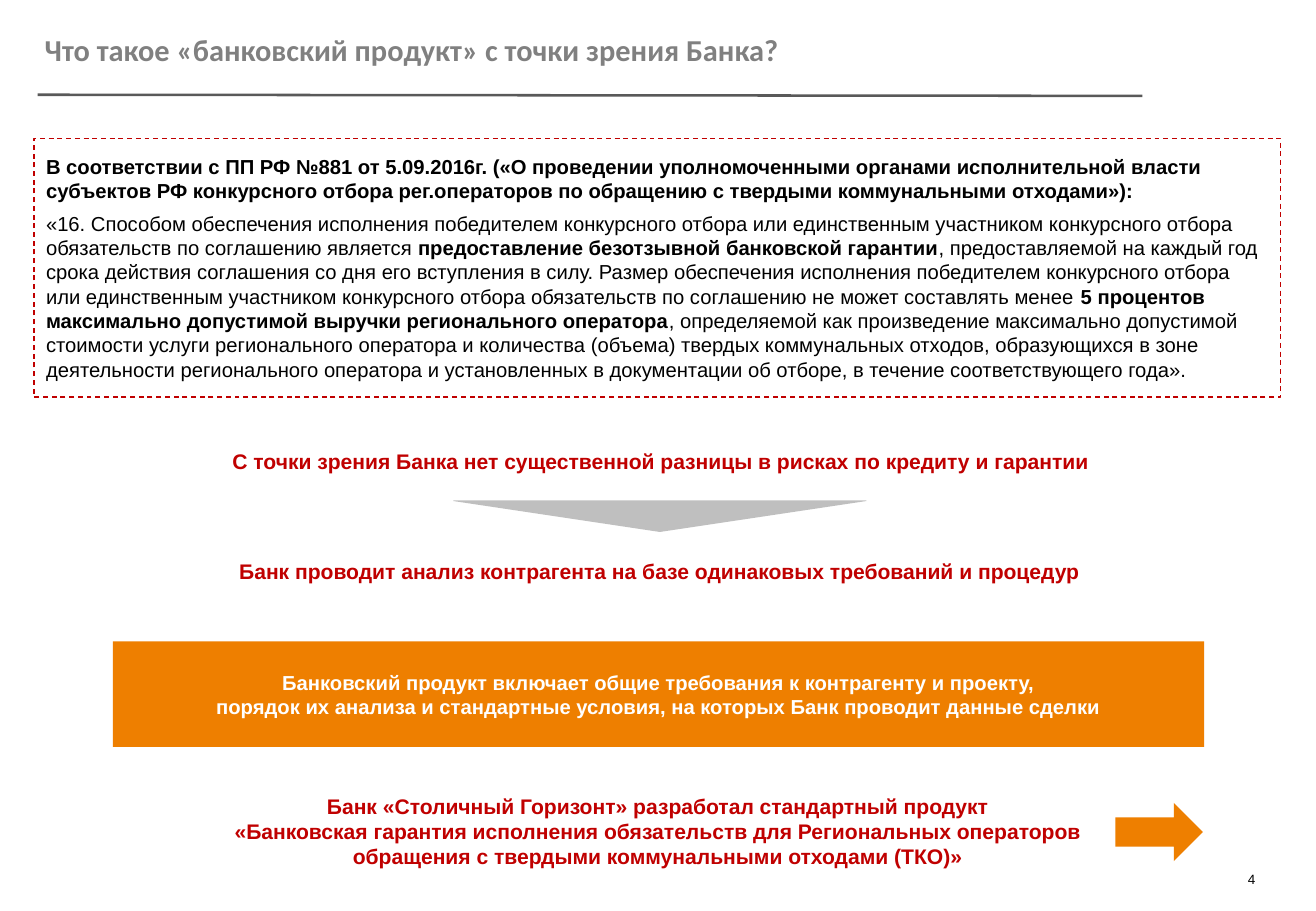
from dataclasses import dataclass
from typing import Optional

import lxml.etree
import pptx
import pptx.dml.color
import pptx.enum.dml
import pptx.enum.shapes
import pptx.enum.text
import pptx.oxml.ns
import pptx.util

Align = pptx.enum.text.PP_ALIGN
Anchor = pptx.enum.text.MSO_ANCHOR
Preset = pptx.enum.shapes.MSO_SHAPE


@dataclass(frozen=True)
class Theme:
    grey: str = "808080"
    rule: str = "595959"
    pointer: str = "BFBFBF"
    red: str = "C00000"
    orange: str = "EE7F00"
    black: str = "000000"
    white: str = "FFFFFF"
    heading_font: str = "Calibri"
    body_font: str = "Arial"
    heading: float = 18
    claim: float = 12.5
    body: float = 12
    number: float = 8
    paragraph_gap: float = 4.8


@dataclass(frozen=True)
class Area:
    """Percentages of the slide's width and height."""
    left: float
    top: float
    width: float
    height: float


@dataclass(frozen=True)
class Run:
    text: str
    bold: bool = True


@dataclass(frozen=True)
class Figure:
    area: Area
    preset: Preset
    fill: str
    line: Optional[str] = None
    rotation: float = 0
    adjustment: Optional[float] = None


@dataclass(frozen=True)
class Claim:
    area: Area
    lines: tuple[str, ...]


THEME = Theme()
deck = pptx.Presentation()
deck.slide_width = pptx.util.Inches(10.83)
deck.slide_height = pptx.util.Inches(7.5)
slide = deck.slides.add_slide(deck.slide_layouts[6])


def across(percent: float) -> int:
    return round(deck.slide_width * percent / 100)


def down(percent: float) -> int:
    return round(deck.slide_height * percent / 100)


def place(area: Area) -> tuple[int, int, int, int]:
    return across(area.left), down(area.top), across(area.width), down(area.height)


def rgb(value: str) -> pptx.dml.color.RGBColor:
    return pptx.dml.color.RGBColor.from_string(value)


def write(holder, paragraphs: list[list[Run]], *, size: float = THEME.body,
          color: str = THEME.black, font: str = THEME.body_font,
          align: Align = Align.LEFT, anchor: Anchor = Anchor.TOP,
          gap: float = 0) -> None:
    frame = holder.text_frame
    frame.word_wrap = True
    frame.vertical_anchor = anchor
    for index, runs in enumerate(paragraphs):
        paragraph = frame.add_paragraph() if index else frame.paragraphs[0]
        paragraph.alignment = align
        if index and gap:
            paragraph.space_before = pptx.util.Pt(gap)
        for part in runs:
            run = paragraph.add_run()
            run.text = part.text
            run.font.name = font
            run.font.size = pptx.util.Pt(size)
            run.font.bold = part.bold
            run.font.color.rgb = rgb(color)


def draw(figure: Figure):
    shape = slide.shapes.add_shape(figure.preset, *place(figure.area))
    shape.shadow.inherit = False
    shape.rotation = figure.rotation
    shape.fill.solid()
    shape.fill.fore_color.rgb = rgb(figure.fill)
    if figure.line:
        shape.line.color.rgb = rgb(figure.line)
        shape.line.width = pptx.util.Pt(0.75)
        shape.line.dash_style = pptx.enum.dml.MSO_LINE.DASH
    else:
        shape.line.fill.background()
    if figure.adjustment is not None:
        shape.adjustments[0] = figure.adjustment
    return shape


def text_area(area: Area):
    return slide.shapes.add_textbox(*place(area))


def draw_rule() -> None:
    rule = slide.shapes.add_connector(
        pptx.enum.shapes.MSO_CONNECTOR.STRAIGHT,
        across(2.86), down(10.4), across(86.8), down(10.53))
    rule.line.color.rgb = rgb(THEME.rule)
    rule.line.width = pptx.util.Pt(1.5)
    lxml.etree.SubElement(rule._element.spPr, pptx.oxml.ns.qn("a:effectLst"))


REGULATION = [
    [Run("В соответствии с ПП РФ №881 от 5.09.2016г. («О проведении уполномоченными органами "
         "исполнительной власти субъектов РФ конкурсного отбора рег.операторов по обращению "
         "с твердыми коммунальными отходами»):")],
    [Run("«16. Способом обеспечения исполнения победителем конкурсного отбора или единственным "
         "участником конкурсного отбора обязательств по соглашению является ", False),
     Run("предоставление безотзывной банковской гарантии"),
     Run(", предоставляемой на каждый год срока действия соглашения со дня его вступления в силу. "
         "Размер обеспечения исполнения победителем конкурсного отбора или единственным участником "
         "конкурсного отбора обязательств по соглашению не может составлять менее ", False),
     Run("5 процентов максимально допустимой выручки регионального оператора"),
     Run(", определяемой как произведение максимально допустимой стоимости услуги регионального "
         "оператора и количества (объема) твердых коммунальных отходов, образующихся в зоне "
         "деятельности регионального оператора и установленных в документации об отборе, "
         "в течение соответствующего года».", False)],
]
DEFINITION = [
    [Run("Банковский продукт включает общие требования к контрагенту и проекту,")],
    [Run("порядок их анализа и стандартные условия, на которых Банк проводит данные сделки")],
]
CLAIMS = [
    Claim(Area(6.93, 48.53, 86.52, 4.13),
          ("С точки зрения Банка нет существенной разницы в рисках по кредиту и гарантии",)),
    Claim(Area(6.83, 60.67, 86.52, 4.13),
          ("Банк проводит анализ контрагента на базе одинаковых требований и процедур",)),
    Claim(Area(2.59, 86.4, 94.74, 9.73),
          ("Банк «Столичный Горизонт» разработал стандартный продукт",
           "«Банковская гарантия исполнения обязательств для Региональных операторов",
           "обращения с твердыми коммунальными отходами (ТКО)»")),
]


def main() -> None:
    draw_rule()
    write(text_area(Area(2.49, 2.8, 78.2, 5.33)),
          [[Run("Что такое «банковский продукт» с точки зрения Банка?")]],
          size=THEME.heading, color=THEME.grey, font=THEME.heading_font)
    regulation = draw(Figure(Area(2.59, 15.2, 94.74, 28.4), Preset.RECTANGLE,
                             THEME.white, line=THEME.red))
    write(regulation, REGULATION, anchor=Anchor.MIDDLE, gap=THEME.paragraph_gap)
    draw(Figure(Area(48.94, 34, 2.4, 45.33), Preset.PENTAGON, THEME.pointer,
                rotation=90, adjustment=0.98))
    definition = draw(Figure(Area(8.59, 70.4, 82.92, 11.6), Preset.RECTANGLE, THEME.orange))
    write(definition, DEFINITION, color=THEME.white, align=Align.CENTER, anchor=Anchor.MIDDLE)
    for claim in CLAIMS:
        write(text_area(claim.area), [[Run(line)] for line in claim.lines],
              size=THEME.claim, color=THEME.red, align=Align.CENTER)
    draw(Figure(Area(84.76, 88.13, 6.65, 6.4), Preset.RIGHT_ARROW, THEME.orange))
    write(text_area(Area(74.79, 93.07, 21.51, 6.93)), [[Run("4", False)]],
          size=THEME.number, align=Align.RIGHT, anchor=Anchor.MIDDLE)
    deck.save("out.pptx")


if __name__ == "__main__":
    main()
